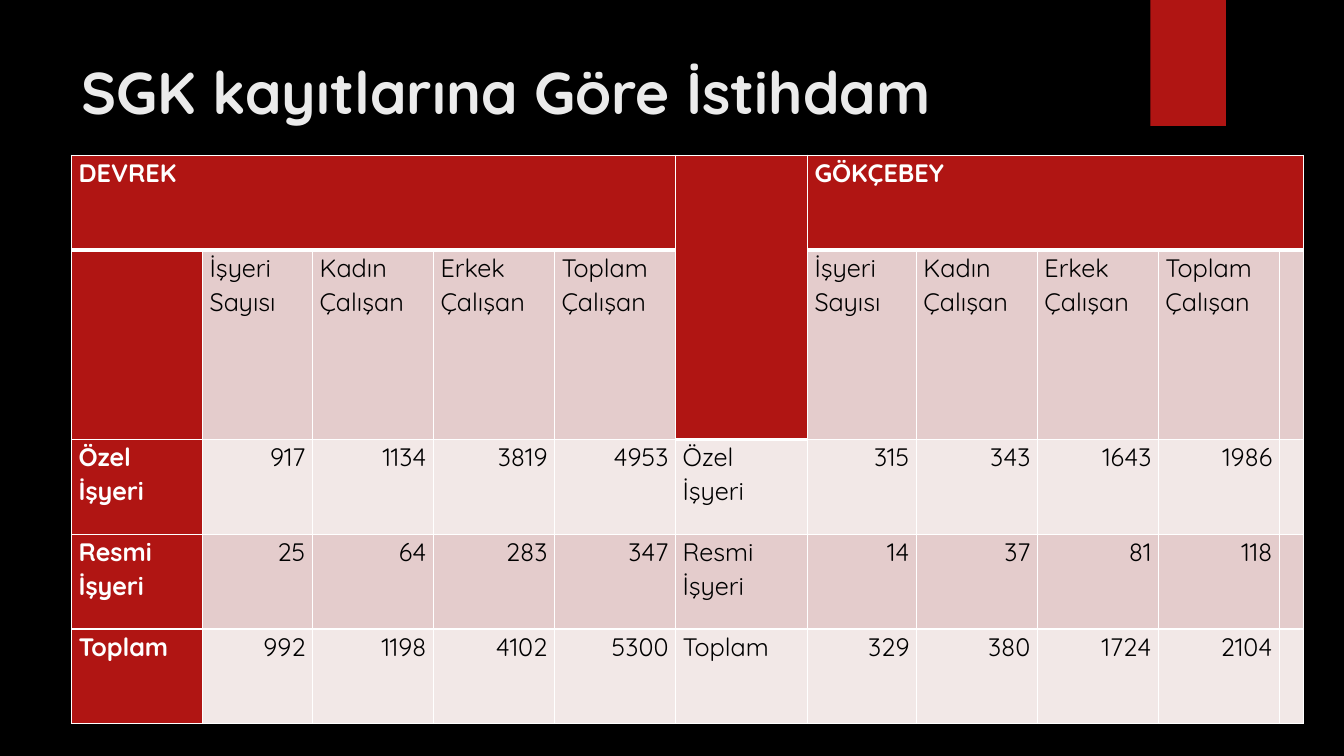
from lxml.etree import SubElement
from pptx import Presentation
from pptx.dml.color import RGBColor
from pptx.enum.shapes import MSO_SHAPE
from pptx.enum.text import MSO_ANCHOR, MSO_AUTO_SIZE, PP_ALIGN
from pptx.oxml.ns import qn
from pptx.util import Inches, Pt

TITLE = "SGK kayıtlarına Göre İstihdam"
HEADS = ["İşyeri Sayısı", "Kadın Çalışan", "Erkek Çalışan", "Toplam Çalışan"]
ROWS = [
    ["DEVREK", "", "", "", "", "", "GÖKÇEBEY", "", "", "", ""],
    ["", *HEADS, "", *HEADS, ""],
    ["Özel İşyeri", "917", "1134", "3819", "4953",
     "Özel İşyeri", "315", "343", "1643", "1986", ""],
    ["Resmi İşyeri", "25", "64", "283", "347",
     "Resmi İşyeri", "14", "37", "81", "118", ""],
    ["Toplam", "992", "1198", "4102", "5300",
     "Toplam", "329", "380", "1724", "2104", ""],
]
COL_WIDTHS = [1.3, 1.09, 1.2, 1.2, 1.2, 1.31, 1.08, 1.2, 1.2, 1.2, 0.2]
ROW_HEIGHTS = [0.94, 1.88, 0.94, 0.94, 0.94]
MERGES = [((0, 0), (0, 4)), ((0, 5), (1, 5)), ((0, 6), (0, 10))]
GAP_COL = 5

FONT = "Quicksand"
RED, WHITE, BLACK, TITLE_GREY = "B01513", "FFFFFF", "000000", "EBEBEB"
BANDS = ["F2E8E7", "E4CCCC"]


def color(hex_text):
    return RGBColor.from_string(hex_text)


def fill(target, hex_text):
    target.fill.solid()
    target.fill.fore_color.rgb = color(hex_text)


def style(font, hex_text, **values):
    for name, value in {"name": FONT, **values}.items():
        setattr(font, name, value)
    font.color.rgb = color(hex_text)


def add_borders(cell, widths):
    """Draw white cell borders; widths maps L, R, T and B to points."""
    tcPr = cell._tc.get_or_add_tcPr()
    for side, width in widths.items():
        ln = SubElement(tcPr, qn(f"a:ln{side}"), w=str(Pt(width)))
        SubElement(SubElement(ln, qn("a:solidFill")), qn("a:srgbClr"), val=WHITE)


def format_cell(cell, text, row, col):
    in_gap_head = col == GAP_COL and row < 2
    is_head = row == 0 or col == 0 or in_gap_head
    thick_top = row == (2 if col == GAP_COL else 1)
    thick_bottom = row == 0 or in_gap_head
    add_borders(cell, {"L": 1, "R": 1, "T": 3 if thick_top else 1,
                       "B": 3 if thick_bottom else 1})
    fill(cell, RED if is_head else BANDS[row % 2])
    if not text:
        return
    for name, value in {"margin_left": 0.07, "margin_right": 0.07,
                        "margin_top": 0, "margin_bottom": 0}.items():
        setattr(cell, name, Inches(value))
    p = cell.text_frame.paragraphs[0]
    p.alignment = PP_ALIGN.RIGHT if text.isdigit() else PP_ALIGN.JUSTIFY
    p.line_spacing = 1.07
    r = p.add_run()
    r.text = text
    style(r.font, WHITE if is_head else BLACK, size=Pt(18), bold=is_head)


def add_title(s):
    title = s.shapes.title
    title.left, title.top = Inches(0.71), Inches(0.5)
    title.width, title.height = Inches(10.29), Inches(1.53)
    tf = title.text_frame
    tf.word_wrap = True
    tf.auto_size = MSO_AUTO_SIZE.NONE
    tf.vertical_anchor = MSO_ANCHOR.TOP
    p = tf.paragraphs[0]
    p.alignment = PP_ALIGN.LEFT
    r = p.add_run()
    r.text = TITLE
    style(r.font, TITLE_GREY, size=Pt(42), bold=True)


def add_ribbon(s):
    ribbon = s.shapes.add_shape(MSO_SHAPE.RECTANGLE, Inches(11.41), 0,
                                Inches(0.75), Inches(1.25))
    ribbon.shadow.inherit = False
    fill(ribbon, RED)
    ribbon.line.fill.background()


def add_employment_table(s):
    table = s.shapes.add_table(len(ROWS), len(COL_WIDTHS), Inches(0.71), Inches(1.54),
                               Inches(sum(COL_WIDTHS)), Inches(sum(ROW_HEIGHTS))).table
    table.horz_banding = False
    table.first_row = False
    for column, width in zip(table.columns, COL_WIDTHS):
        column.width = Inches(width)
    for table_row, height in zip(table.rows, ROW_HEIGHTS):
        table_row.height = Inches(height)
    for start, end in MERGES:
        table.cell(*start).merge(table.cell(*end))
    for row, texts in enumerate(ROWS):
        for col, text in enumerate(texts):
            format_cell(table.cell(row, col), text, row, col)


def main():
    prs = Presentation()
    prs.slide_width, prs.slide_height = Inches(13.33), Inches(7.5)
    s = prs.slides.add_slide(prs.slide_layouts[5])
    fill(s.background, BLACK)
    add_ribbon(s)
    add_title(s)
    add_employment_table(s)
    prs.save("out.pptx")


if __name__ == "__main__":
    main()
